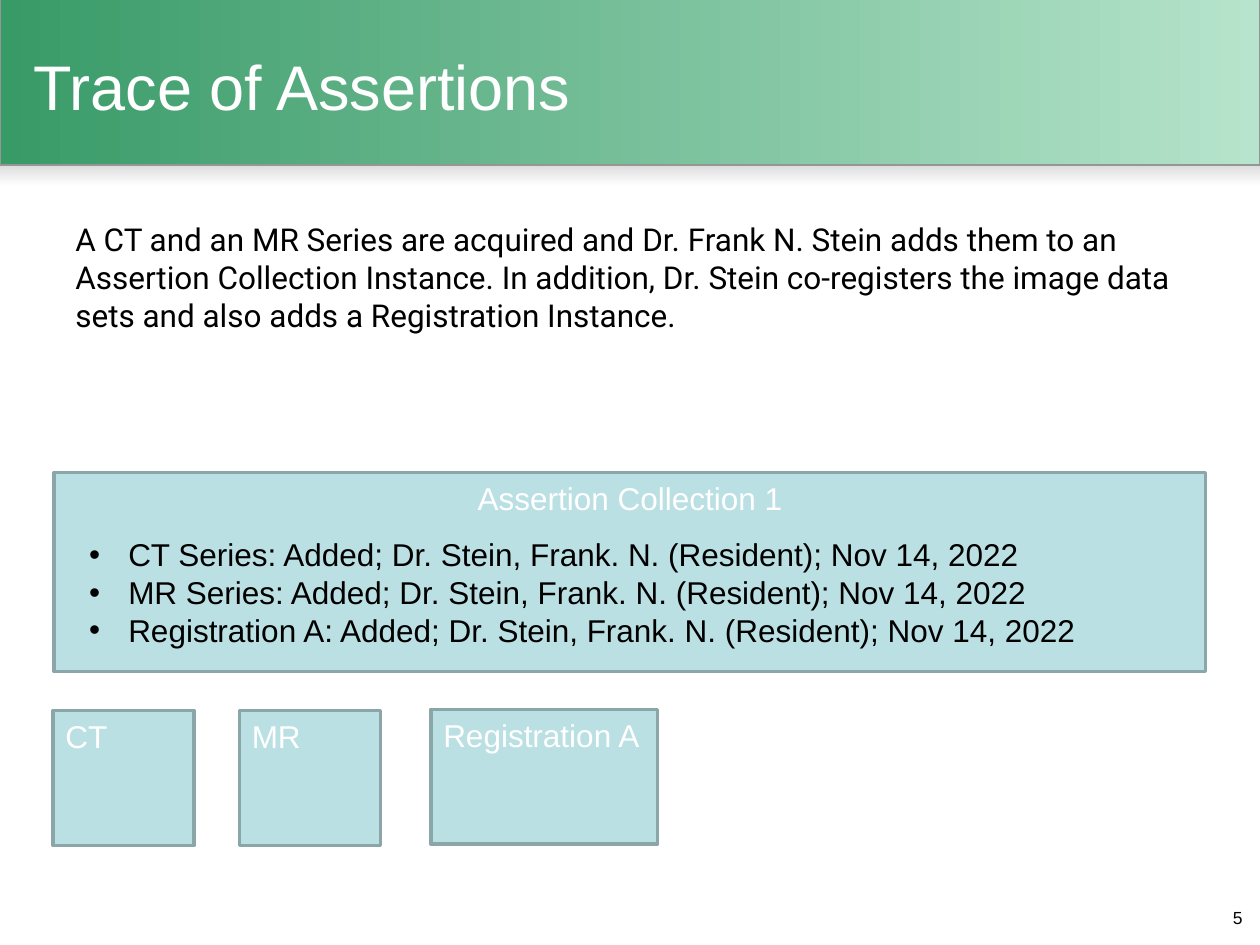
from dataclasses import dataclass

from lxml import etree
from pptx import Presentation
from pptx.dml.color import RGBColor
from pptx.enum.shapes import MSO_SHAPE
from pptx.enum.text import MSO_ANCHOR, PP_ALIGN
from pptx.oxml.ns import qn
from pptx.util import Pt

RECT = MSO_SHAPE.RECTANGLE
TOP, MID = MSO_ANCHOR.TOP, MSO_ANCHOR.MIDDLE
LEFT, CENTER, RIGHT = PP_ALIGN.LEFT, PP_ALIGN.CENTER, PP_ALIGN.RIGHT
SCALE = 9144


@dataclass(frozen=True)
class Theme:
    """Colours, fonts and type sizes of the slide."""
    white: str = "FFFFFF"
    black: str = "000000"
    fade: tuple = ("DDDDDD", "FFFFFF")
    band: tuple = ("389A67", "B6E4CC")
    rim: str = "969696"
    fill: str = "BBE0E3"
    edge: str = "8AA6A8"
    sans: str = "Arial"
    prose: str = "Roboto"
    head: int = 36
    body: int = 18
    small: int = 10


def px(count):
    """Turn px into EMU."""
    return count * SCALE


def rgb(code):
    """Turn a hex code into a colour."""
    return RGBColor.from_string(code)


def write(shape, text, *, size, color, font, align=LEFT, anchor=TOP, bullet=False):
    """Fill a shape with text, one paragraph a line."""
    frame = shape.text_frame
    frame.word_wrap = True
    frame.vertical_anchor = anchor
    frame.text = text
    for para in frame.paragraphs:
        para.alignment = align
        if bullet:
            props = para._p.get_or_add_pPr()
            props.set("marL", str(px(31)))
            props.set("indent", str(px(-31)))
            etree.SubElement(props, qn("a:buFont")).set("typeface", "Arial")
            etree.SubElement(props, qn("a:buChar")).set("char", "•")
        for run in para.runs:
            run.font.size = Pt(size)
            run.font.name = font
            run.font.color.rgb = rgb(color)


class Deck:
    """Holds the theme and the current slide."""

    def __init__(self, theme):
        """Open a deck with one blank slide."""
        self.theme = theme
        self.file = Presentation()
        self.file.slide_width, self.file.slide_height = px(1000), px(750)
        self.slide = self.file.slides.add_slide(self.file.slide_layouts[6])

    def rect(self, area, line=None, width=1):
        """Add a plain rectangle with an optional line."""
        shape = self.slide.shapes.add_shape(RECT, *map(px, area))
        shape.shadow.inherit = False
        if line:
            shape.line.color.rgb = rgb(line)
            shape.line.width = Pt(width)
        else:
            shape.line.fill.background()
        return shape

    def blend(self, area, colors, angle, line=None):
        """Add a rectangle with a two-colour gradient."""
        fill = self.rect(area, line, 0.75).fill
        fill.gradient()
        fill.gradient_angle = angle
        for stop, color in zip(fill.gradient_stops, colors):
            stop.color.rgb = rgb(color)

    def box(self, area, label, align=LEFT):
        """Add a labelled box."""
        look = self.theme
        shape = self.rect(area, look.edge, 2)
        shape.fill.solid()
        shape.fill.fore_color.rgb = rgb(look.fill)
        write(shape, label, size=look.body, color=look.white, font=look.sans, align=align)

    def text(self, area, words, **style):
        """Add a text box."""
        look = self.theme
        base = {"size": look.body, "color": look.black, "font": look.sans}
        write(self.slide.shapes.add_textbox(*map(px, area)), words, **(base | style))


def main():
    """Build and save the slide."""
    look = Theme()
    deck = Deck(look)
    deck.blend((0, 131, 1000, 17), look.fade, 270)
    deck.blend((0, -2, 1000, 133), look.band, 0, look.rim)
    deck.text((17, 14, 675, 107), "Trace of Assertions",
              size=look.head, color=look.white, anchor=MID)
    deck.text((937, 715, 59, 34), "5", size=look.small, align=RIGHT)

    for left, top, width, label in (
        (342, 563, 180, "Registration A"),
        (42, 564, 112, "CT"),
        (190, 564, 112, "MR"),
    ):
        deck.box((left, top, width, 107), label)

    deck.box((43, 375, 914, 158), "Assertion Collection 1", CENTER)
    items = ("CT Series", "MR Series", "Registration A")
    trace = "\n".join(
        f"{item}: Added; Dr. Stein, Frank. N. (Resident); Nov 14, 2022" for item in items
    )
    deck.text((61, 420, 871, 101), trace, bullet=True)
    deck.text(
        (50, 170, 907, 101),
        "A CT and an MR Series are acquired and Dr. Frank N. Stein adds them to an "
        "Assertion Collection Instance. In addition, Dr. Stein co-registers the image "
        "data sets and also adds a Registration Instance.",
        font=look.prose,
    )
    deck.file.save("out.pptx")


if __name__ == "__main__":
    main()
